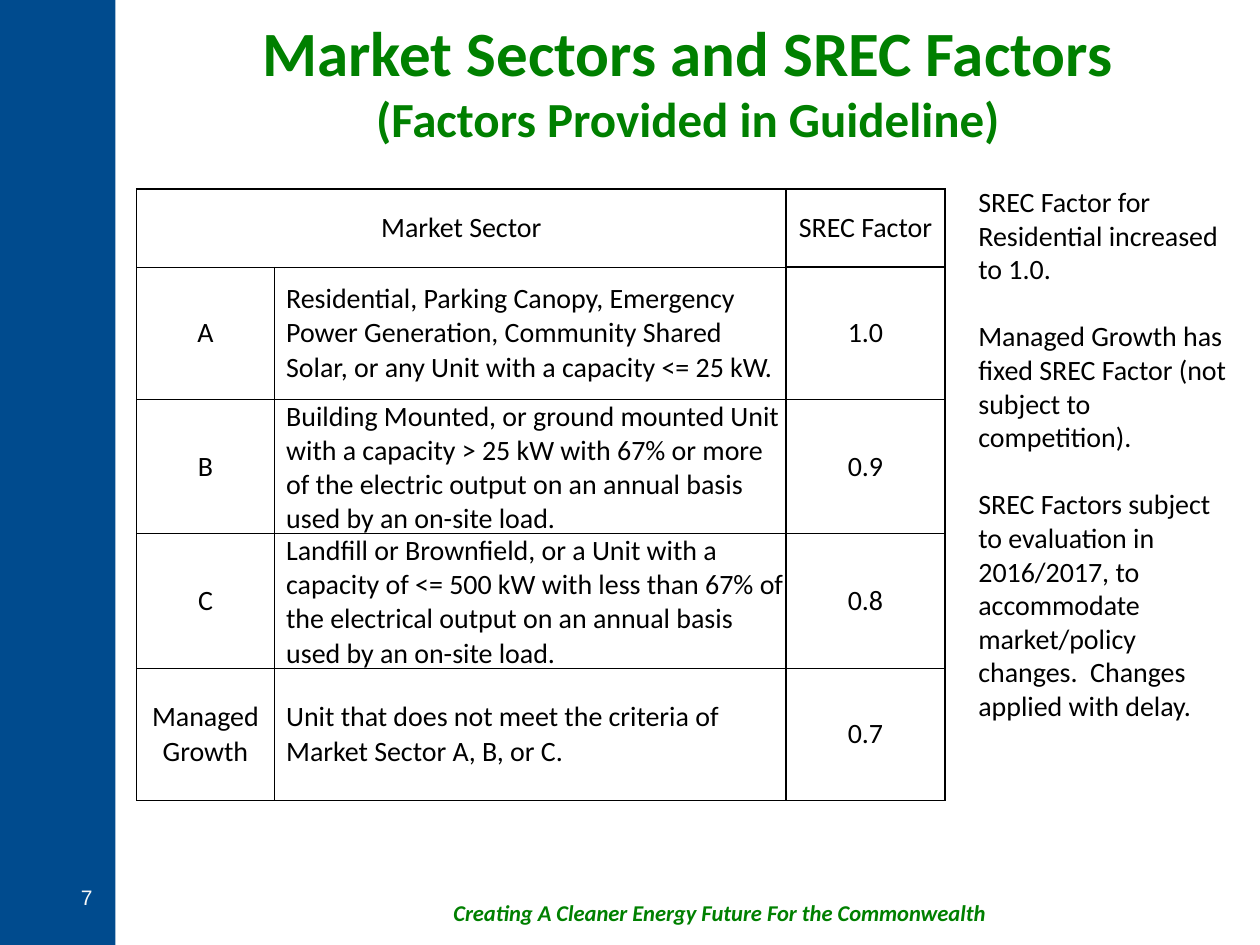
from lxml import etree
from pptx import Presentation
from pptx.dml.color import RGBColor
from pptx.enum.shapes import MSO_SHAPE
from pptx.enum.text import MSO_ANCHOR, MSO_AUTO_SIZE, PP_ALIGN
from pptx.oxml.ns import qn
from pptx.util import Pt

RECTANGLE = MSO_SHAPE.RECTANGLE
MIDDLE, TOP = MSO_ANCHOR.MIDDLE, MSO_ANCHOR.TOP
LEFT, CENTER, RIGHT = PP_ALIGN.LEFT, PP_ALIGN.CENTER, PP_ALIGN.RIGHT
NO_AUTOFIT = MSO_AUTO_SIZE.NONE

BLUE = RGBColor(0x00, 0x4B, 0x8E)
GREEN = RGBColor(0x00, 0x80, 0x00)
BLACK = RGBColor(0x00, 0x00, 0x00)
WHITE = RGBColor(0xFF, 0xFF, 0xFF)
OFF_WHITE = RGBColor(0xF8, 0xF8, 0xF8)

TITLE_LINES = [("Market Sectors and SREC Factors", 36),
               ("(Factors Provided in Guideline)", 28)]
SECTORS = [
    ("Market Sector", "", "SREC Factor"),
    ("A", "Residential, Parking Canopy, Emergency Power Generation, Community "
          "Shared Solar, or any Unit with a capacity <= 25 kW.", "1.0"),
    ("B", "Building Mounted, or ground mounted Unit with a capacity > 25 kW with "
          "67% or more of the electric output on an annual basis used by an "
          "on-site load.", "0.9"),
    ("C", "Landfill or Brownfield, or a Unit with a capacity of <= 500 kW with "
          "less than 67% of the electrical output on an annual basis used by an "
          "on-site load.", "0.8"),
    ("Managed Growth", "Unit that does not meet the criteria of Market Sector "
                       "A, B, or C.", "0.7"),
]
COLUMN_WIDTHS = (78.8, 292.4, 90.8)
HEADER_HEIGHT, SECTOR_HEIGHT = 44.7, 75.6
NOTES = [
    "SREC Factor for Residential increased to 1.0.",
    "Managed Growth has fixed SREC Factor (not subject to competition).",
    "SREC Factors subject to evaluation in 2016/2017, to accommodate "
    "market/policy changes.  Changes applied with delay.",
]


def format_paragraph(paragraph, size, color, font="Calibri", align=LEFT,
                     bold=False, italic=False):
    paragraph.alignment = align
    for run in paragraph.runs:
        run.font.name, run.font.size = font, Pt(size)
        run.font.bold, run.font.italic = bold, italic
        run.font.color.rgb = color


def add_text(slide, box, lines, anchor=TOP, gap=0, **style):
    frame = slide.shapes.add_textbox(*map(Pt, box)).text_frame
    frame.word_wrap = True
    frame.vertical_anchor = anchor
    frame.text = "\n".join(lines)
    for index, paragraph in enumerate(frame.paragraphs):
        format_paragraph(paragraph, **style)
        if index:
            paragraph.space_before = Pt(gap)


def add_title(slide, box):
    title = slide.shapes.title
    title.left, title.top, title.width, title.height = map(Pt, box)
    frame = title.text_frame
    frame.text = "\n".join(text for text, _ in TITLE_LINES)
    frame.auto_size = NO_AUTOFIT
    frame.vertical_anchor = MIDDLE
    for paragraph, (_, size) in zip(frame.paragraphs, TITLE_LINES):
        format_paragraph(paragraph, size, GREEN, align=CENTER, bold=True)


def add_side_band(slide, box):
    left, top, width, height = box
    band = slide.shapes.add_shape(RECTANGLE, *map(Pt, box))
    band.shadow.inherit = False
    band.fill.solid()
    band.fill.fore_color.rgb = BLUE
    band.line.fill.background()
    # Page number near the foot of the band
    add_text(slide, (left + 12, top + height - 41.8, width - 18, 28.8), ["7"],
             anchor=MIDDLE, size=12, color=OFF_WHITE, font="Arial", align=RIGHT)


def set_borders(cell, widths):
    properties = cell._tc.get_or_add_tcPr()
    for side, width in zip("LRTB", widths):
        line = etree.SubElement(properties, qn(f"a:ln{side}"), w=str(Pt(width)))
        fill = etree.SubElement(line, qn("a:solidFill"))
        etree.SubElement(fill, qn("a:srgbClr"), val=str(BLACK))


def border_widths(row, column):
    header, factor = row == 0, column == 2
    heavy = (header or factor,                  # left
             header or column > 0,              # right
             header or (row == 1 and factor),   # top
             header and factor)                 # bottom
    return [1 if is_heavy else 0.5 for is_heavy in heavy]


def add_sector_table(slide, left, top):
    heights = [HEADER_HEIGHT] + [SECTOR_HEIGHT] * (len(SECTORS) - 1)
    table = slide.shapes.add_table(
        len(SECTORS), len(COLUMN_WIDTHS), Pt(left), Pt(top),
        Pt(sum(COLUMN_WIDTHS)), Pt(sum(heights))).table
    table.first_row = table.horz_banding = False
    for column, width in zip(table.columns, COLUMN_WIDTHS):
        column.width = Pt(width)
    for row, height in zip(table.rows, heights):
        row.height = Pt(height)
    for row, sector in enumerate(SECTORS):
        for column, text in enumerate(sector):
            cell = table.cell(row, column)
            is_description = row > 0 and column == 1
            cell.margin_left = Pt(6.75 if is_description else 0)
            cell.margin_right = cell.margin_top = cell.margin_bottom = 0
            cell.vertical_anchor = MIDDLE
            set_borders(cell, border_widths(row, column))
            cell.fill.solid()
            cell.fill.fore_color.rgb = WHITE
            cell.text_frame.text = text
            format_paragraph(cell.text_frame.paragraphs[0], 16, BLACK,
                             align=LEFT if is_description else CENTER)
    # "Market Sector" heads the first two columns
    table.cell(0, 0).merge(table.cell(0, 1))


def main():
    presentation = Presentation()
    presentation.slide_width, presentation.slide_height = Pt(720), Pt(540)
    slide = presentation.slides.add_slide(presentation.slide_layouts[5])

    add_side_band(slide, (0, 0, 66, 540))
    add_title(slide, (90, 18, 606, 56))
    add_sector_table(slide, 78, 108)
    # Comments beside the table
    add_text(slide, (552, 102, 156, 317.5), NOTES, gap=19.2, size=16, color=BLACK)
    # Footer motto
    add_text(slide, (252, 510, 342, 30),
             ["Creating A Cleaner Energy Future For the Commonwealth"],
             size=12.9, color=GREEN, bold=True, italic=True)

    presentation.save("out.pptx")


if __name__ == "__main__":
    main()
